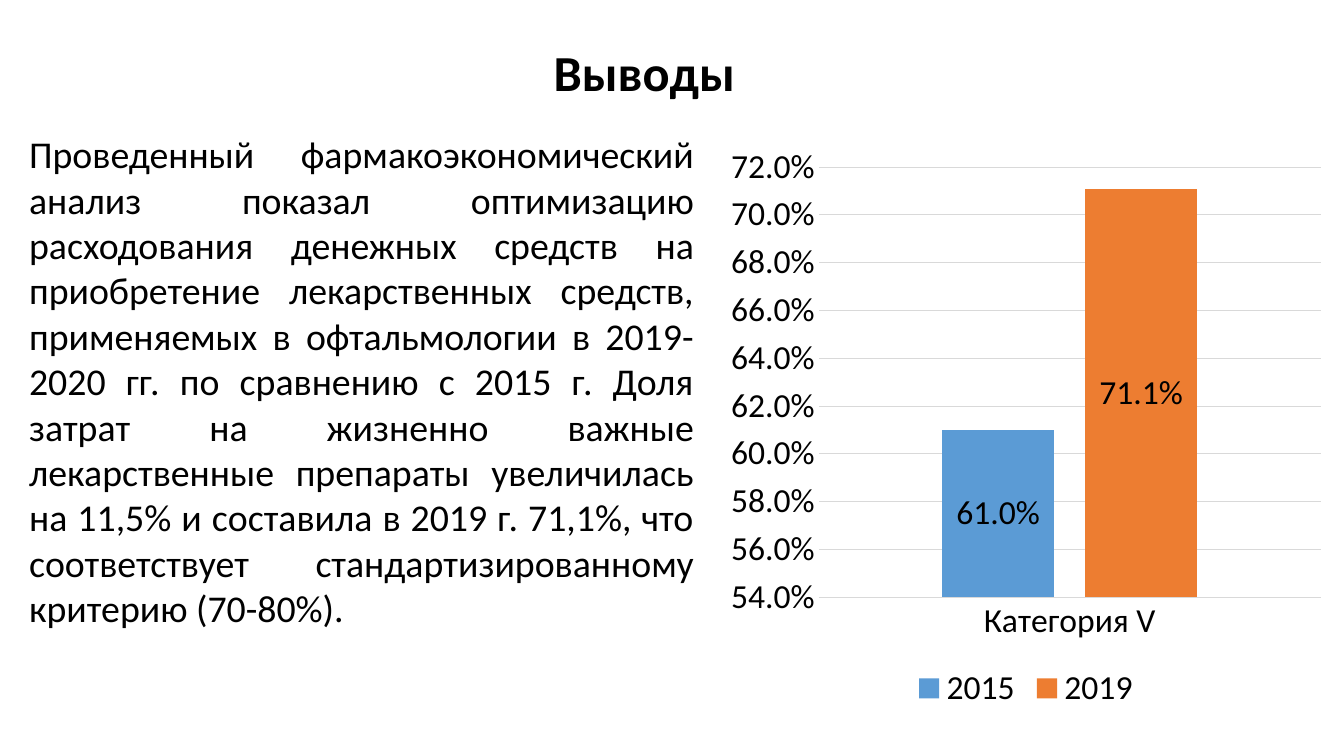
from dataclasses import dataclass

from pptx import Presentation
from pptx.chart.data import CategoryChartData
from pptx.dml.color import RGBColor
from pptx.enum.chart import XL_CHART_TYPE, XL_LABEL_POSITION, XL_LEGEND_POSITION, XL_TICK_MARK
from pptx.enum.text import MSO_ANCHOR, MSO_AUTO_SIZE, PP_ALIGN
from pptx.util import Inches, Pt

FONT = "Calibri"
BLACK = "000000"
GRID = "D9D9D9"
PERCENT = "0.0%"
CONCLUSION = (
    "Проведенный фармакоэкономический анализ показал оптимизацию расходования "
    "денежных средств на приобретение лекарственных средств, применяемых в "
    "офтальмологии в 2019-2020 гг. по сравнению с 2015 г. Доля затрат на жизненно "
    "важные лекарственные препараты увеличилась на 11,5% и составила в 2019 г. "
    "71,1%, что соответствует стандартизированному критерию (70-80%)."
)


@dataclass
class YearShare:
    year: str
    share: float
    color: str


SHARES = [YearShare("2015", 0.61, "5B9BD5"), YearShare("2019", 0.711, "ED7D31")]


def rgb(color: str) -> RGBColor:
    return RGBColor.from_string(color)


def style_font(font, size: float, bold: bool = False) -> None:
    font.name = FONT
    font.size = Pt(size)
    font.bold = bold
    font.color.rgb = rgb(BLACK)


def write_text(box, text: str, *, size: float, align, bold: bool = False,
               anchor=MSO_ANCHOR.TOP, spacing: float = 1.0) -> None:
    frame = box.text_frame
    frame.word_wrap = True
    frame.auto_size = MSO_AUTO_SIZE.NONE
    frame.vertical_anchor = anchor
    para = frame.paragraphs[0]
    para.alignment = align
    para.line_spacing = spacing
    span = para.add_run()
    span.text = text
    style_font(span.font, size, bold)


def style_line(line) -> None:
    line.color.rgb = rgb(GRID)
    line.width = Pt(0.75)


def add_share_chart(page) -> None:
    data = CategoryChartData(number_format=PERCENT)
    data.categories = ["Категория V"]
    for item in SHARES:
        data.add_series(item.year, [item.share])
    chart = page.shapes.add_chart(
        XL_CHART_TYPE.COLUMN_CLUSTERED,
        Inches(7.13), Inches(1.34), Inches(6.09), Inches(5.76), data,
    ).chart
    style_font(chart.font, 24)
    chart.has_title = False
    chart.has_legend = True
    chart.legend.position = XL_LEGEND_POSITION.BOTTOM
    chart.legend.include_in_layout = False

    for axis in (chart.category_axis, chart.value_axis):
        axis.major_tick_mark = axis.minor_tick_mark = XL_TICK_MARK.NONE
    style_line(chart.category_axis.format.line)
    values = chart.value_axis
    values.minimum_scale, values.maximum_scale, values.major_unit = 0.54, 0.72, 0.02
    values.format.line.fill.background()
    style_line(values.major_gridlines.format.line)
    values.tick_labels.number_format = PERCENT
    values.tick_labels.number_format_is_linked = False

    plot = chart.plots[0]
    plot.gap_width = 219
    plot.overlap = -27
    plot.vary_by_categories = False
    for series, item in zip(plot.series, SHARES):
        series.format.fill.solid()
        series.format.fill.fore_color.rgb = rgb(item.color)
        labels = series.data_labels
        labels.show_value = True
        labels.position = XL_LABEL_POSITION.CENTER
        labels.number_format = PERCENT
        labels.number_format_is_linked = False
        style_font(labels.font, 24)


def main() -> None:
    """Build the conclusions slide with its text and cost share chart."""
    deck = Presentation()
    deck.slide_width, deck.slide_height = Inches(13.33), Inches(7.5)
    page = deck.slides.add_slide(deck.slide_layouts[5])

    title = page.shapes.title
    title.left, title.top = Inches(5.09), Inches(0.35)
    title.width, title.height = Inches(2.6), Inches(0.79)
    write_text(title, "Выводы", size=36, align=PP_ALIGN.CENTER, bold=True,
               anchor=MSO_ANCHOR.MIDDLE, spacing=0.9)

    box = page.shapes.add_textbox(Inches(0.19), Inches(1.25), Inches(6.79), Inches(6.01))
    write_text(box, CONCLUSION, size=27, align=PP_ALIGN.JUSTIFY)
    add_share_chart(page)
    deck.save("out.pptx")


if __name__ == "__main__":
    main()
